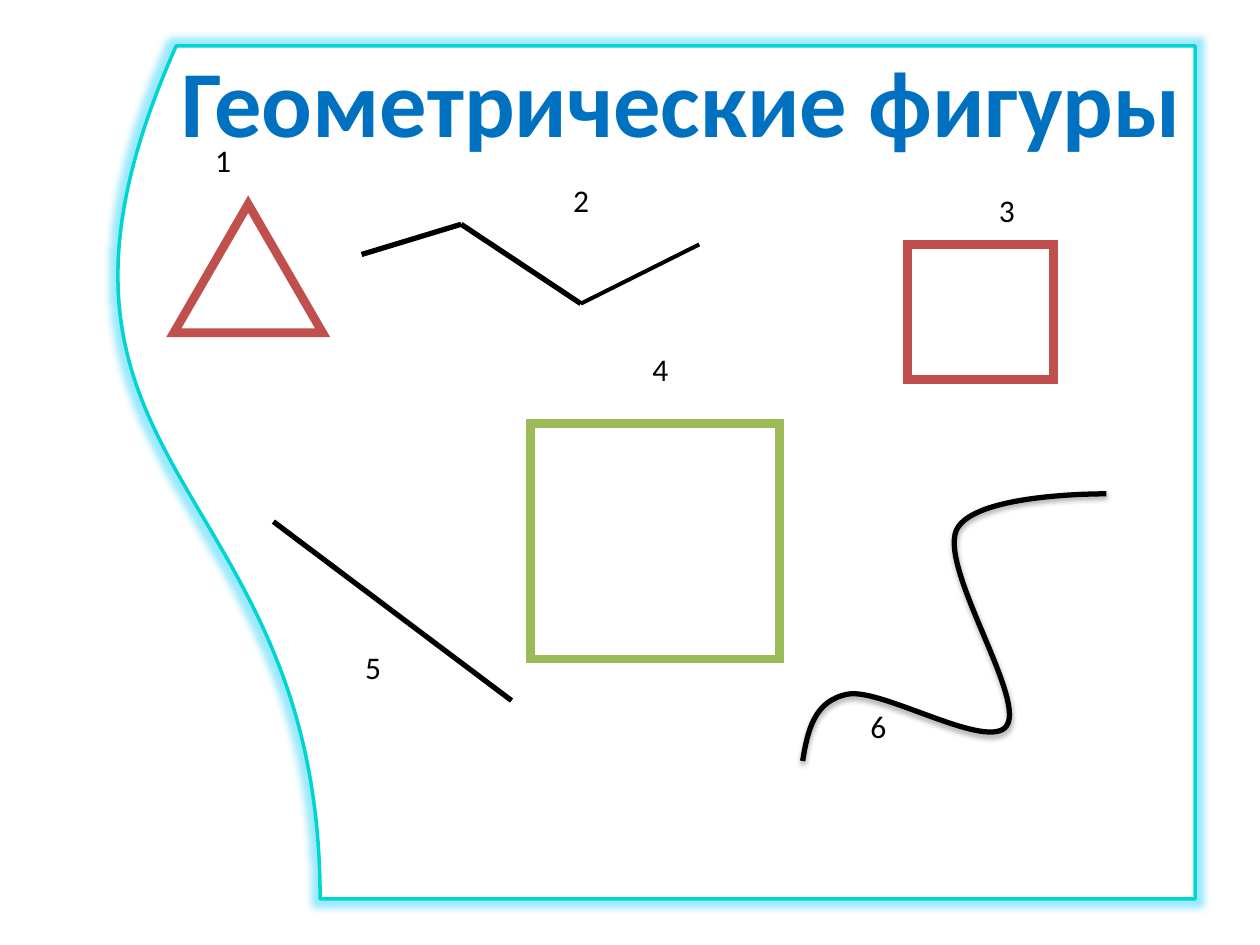
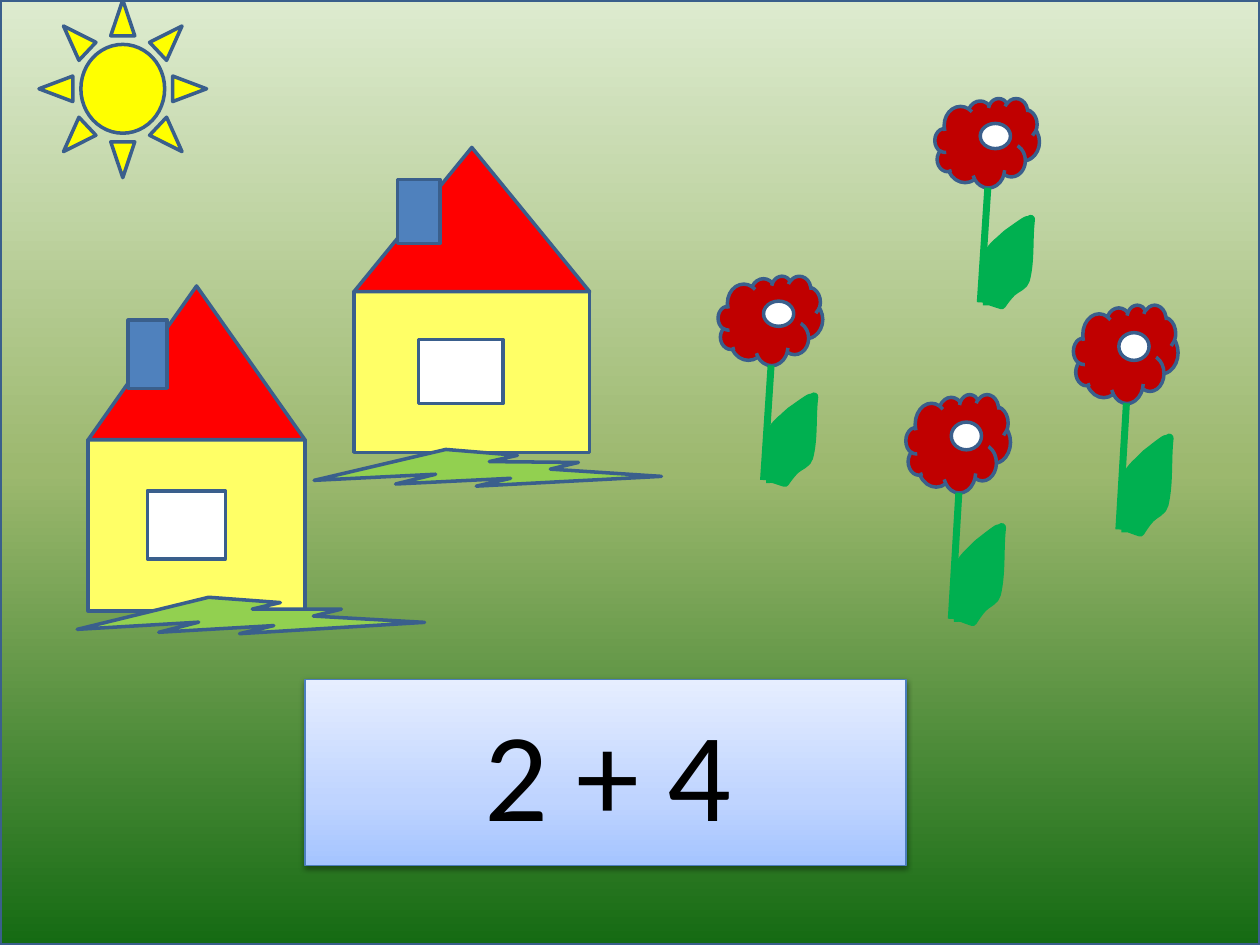
from copy import deepcopy

from pptx import Presentation
from pptx import util as u
from pptx.dml.color import RGBColor
from pptx.enum import shapes, text
from pptx.oxml import parse_xml
from pptx.oxml.ns import nsdecls, qn

KIND = shapes.MSO_SHAPE
STRAIGHT = shapes.MSO_CONNECTOR.STRAIGHT
FONT = "Calibri"
BLACK, WHITE, CYAN = "000000", "FFFFFF", "00D5D0"
RED, GREEN, LEAF, NAVY = "C0504D", "9BBB59", "00B050", "3A5F8C"
SHADOW = ('<a:outerShdw blurRad="40000" dist="{}" dir="5400000" rotWithShape="0">'
          '<a:srgbClr val="000000"><a:alpha val="{}000"/></a:srgbClr></a:outerShdw>')
GLOW = ('<a:glow rad="101600"><a:srgbClr val="00C8F5">'
        '<a:alpha val="40000"/></a:srgbClr></a:glow>')

presentation = Presentation()
presentation.slide_width = u.Inches(10)
presentation.slide_height = u.Inches(7.5)
CELL = presentation.slide_width / 10  # the grid has 10 columns and 7.5 rows


def cells(*lengths):
    return [round(length * CELL) for length in lengths]


def paint(shape, fill, line, width, effect=""):
    """Fill is a hex string, a list of (position, hex) running down, or None."""
    if isinstance(fill, list):
        shape.fill.gradient()
        shape.fill.gradient_angle = 270
        stop_list = shape.element.find(".//" + qn("a:gsLst"))
        while len(stop_list) < len(fill):
            stop_list.append(deepcopy(stop_list[0]))
        for stop, (position, colour) in zip(shape.fill.gradient_stops, fill):
            stop.position = position
            stop.color.rgb = RGBColor.from_string(colour)
    elif fill:
        shape.fill.solid()
        shape.fill.fore_color.rgb = RGBColor.from_string(fill)
    elif hasattr(shape, "fill"):
        shape.fill.background()
    shape.line.color.rgb = RGBColor.from_string(line)
    shape.line.width = u.Pt(width)
    shape.element.spPr.append(
        parse_xml(f'<a:effectLst {nsdecls("a")}>{effect}</a:effectLst>'))


blank = presentation.slide_layouts[6]
figures = presentation.slides.add_slide(blank)
picture = presentation.slides.add_slide(blank)

# Shared frame, kept on the master
frame = figures.shapes.add_shape(KIND.FLOWCHART_DOCUMENT, *cells(1.77, -0.58, 6.77, 8.66))
frame.rotation = 90
paint(frame, WHITE, CYAN, 2, GLOW)
frame.element.nvSpPr.cNvPr.set("id", "20")
presentation.slide_master.shapes.element.append(frame.element)

# Slide 1: closed figures with sharp corners
for kind, box, colour in [
    (KIND.ISOSCELES_TRIANGLE, (1.38, 1.62, 1.18, 1.02), RED),
    (KIND.RECTANGLE, (7.2, 1.94, 1.16, 1.07), RED),
    (KIND.RECTANGLE, (4.21, 3.36, 1.98, 1.87), GREEN),
]:
    figure = figures.shapes.add_shape(kind, *cells(*box))
    paint(figure, WHITE, colour, 5)
    figure.element.spPr.find(qn("a:ln")).append(
        parse_xml(f'<a:miter {nsdecls("a")} lim="800000"/>'))

# Slide 1: segment and broken line
for ends, width in [
    ((2.17, 4.14, 4.06, 5.56), 3),
    ((3.66, 1.78, 4.61, 2.41), 3),
    ((2.87, 2.02, 3.66, 1.78), 3),
    ((4.61, 2.41, 5.55, 1.94), 2.25),
]:
    paint(figures.shapes.add_connector(STRAIGHT, *cells(*ends)), None, BLACK, width)

# Slide 2: meadow and answer panel
meadow = picture.shapes.add_shape(KIND.RECTANGLE, *cells(0, 0, 10, 7.5))
paint(meadow, [(0, "DDEBCF"), (0.5, "9CB86E"), (1, "156B13")], NAVY, 2)
panel = picture.shapes.add_shape(KIND.RECTANGLE, *cells(2.42, 5.39, 4.77, 1.48))
paint(panel, [(0, "E6EEFF"), (0.65, "BFD4FF"), (1, "A4C4FF")], "4B7EBC", 0.75,
      SHADOW.format(20000, 38))

# Slide 2: houses, with parts as shares of the house
house_parts = [
    (KIND.RECTANGLE, (0, 0.473, 1, 0.527), "FFFF66"),
    (KIND.ISOSCELES_TRIANGLE, (0, 0, 1, 0.473), "FF0000"),
    (KIND.RECTANGLE, (0.273, 0.63, 0.36, 0.21), WHITE),
    (KIND.RECTANGLE, (0.185, 0.105, 0.18, 0.21), "4F81BD"),
]
houses = picture.shapes.add_group_shape()
for left, top, width, height in [(0.7, 2.27, 1.72, 2.58), (2.81, 1.17, 1.87, 2.42)]:
    for kind, (x, y, w, h), colour in house_parts:
        part = houses.shapes.add_shape(
            kind, *cells(left + x * width, top + y * height, w * width, h * height))
        paint(part, colour, NAVY, 2)

# Curved outlines: a start point, then Bezier pieces of three points each
curve = [(6.37, 6.04),
         (6.41, 5.8), (6.46, 5.56), (6.73, 5.51),
         (7, 5.46), (7.85, 5.97), (7.99, 5.76),
         (8.14, 5.54), (7.46, 4.52), (7.59, 4.21),
         (7.72, 3.91), (8.78, 3.92), (8.78, 3.92)]
leaf = [(0.38, 1.51),
        (0.39, 1.42), (0.39, 1.33), (0.42, 1.25),
        (0.43, 1.21), (0.46, 1.18), (0.49, 1.15),
        (0.53, 1.12), (0.56, 1.08), (0.61, 1.05),
        (0.86, 0.87), (0.64, 1.06), (0.76, 0.96),
        (0.74, 1.12), (0.76, 1.28), (0.72, 1.44),
        (0.71, 1.49), (0.64, 1.51), (0.61, 1.54),
        (0.58, 1.57), (0.55, 1.61), (0.53, 1.64),
        (0.40, 1.60), (0.46, 1.61), (0.38, 1.61)]
bezier_jobs = [(figures.shapes, curve, None, BLACK, 3, SHADOW.format(23000, 35))]

# Slide 2: flowers
flowers = picture.shapes.add_group_shape()
for left, top, stretch in [(5.7, 2.19, 1), (7.42, 0.78, 1), (7.19, 3.13, 1.1), (8.52, 2.42, 1.1)]:
    for kind, (x, y, w, h), colour in [
        (KIND.CLOUD, (0, 0, 0.83, 0.71), "C00000"),
        (KIND.OVAL, (0.36, 0.2, 0.24, 0.2), WHITE),
    ]:
        part = flowers.shapes.add_shape(
            kind, *cells(left + x, top + y * stretch, w, h * stretch))
        paint(part, colour, NAVY, 2)
    stem = flowers.shapes.add_connector(
        STRAIGHT, *cells(left + 0.42, top + 0.71 * stretch, left + 0.36, top + 1.62 * stretch))
    paint(stem, None, LEAF, 4)
    points = [(left + x, top + y * stretch) for x, y in leaf]
    bezier_jobs.append((flowers.shapes, points, LEAF, LEAF, 5, ""))

# Curved line and leaves: every three straight pieces become one Bezier piece
for target, points, fill, line, width, effect in bezier_jobs:
    start, *others = [cells(*point) for point in points]
    builder = target.build_freeform(*start)
    builder.add_line_segments(others, close=False)
    outline = builder.convert_to_shape()
    pieces = list(outline.element.iter(qn("a:lnTo")))
    for i in range(0, len(pieces), 3):
        bezier = parse_xml(f'<a:cubicBezTo {nsdecls("a")}/>')
        pieces[i].addprevious(bezier)
        for piece in pieces[i:i + 3]:
            bezier.append(piece[0])
            piece.getparent().remove(piece)
    paint(outline, fill, line, width, effect)

# Slide 2: sun and grass
for kind, box, rotation, colour in [
    (KIND.SUN, (0.31, 0, 1.33, 1.41), 0, "FFFF00"),
    (KIND.LIGHTNING_BOLT, (0.62, 4.69, 2.73, 0.47), 350.8, "92D050"),
    (KIND.LIGHTNING_BOLT, (2.5, 3.52, 2.73, 0.47), 351.3, "92D050"),
]:
    shape = picture.shapes.add_shape(kind, *cells(*box))
    shape.rotation = rotation
    paint(shape, colour, NAVY, 2)

# Text on both slides: figure numbers, title, sum
labels = [
    (figures, words, (left, top, 0.33, 0.4), 18, BLACK, None)
    for words, left, top in [("1", 1.61, 1.07), ("2", 4.45, 1.39), ("3", 7.83, 1.47),
                             ("4", 5.08, 2.73), ("5", 2.8, 5.09), ("6", 6.81, 5.56)]
]
labels += [
    (figures, "Геометрические фигуры", (1.3, 0.29, 8.22, 1.01), 54, "0070C0", ("FCFCFD", 1.4)),
    (picture, "2 + 4", (3.59, 5.47, 2.47, 1.31), 72, BLACK, ("054697", 1)),
]
for slide, words, box, size, colour, outline in labels:
    label = slide.shapes.add_textbox(*cells(*box))
    label.text_frame.word_wrap = False
    label.text_frame.auto_size = text.MSO_AUTO_SIZE.SHAPE_TO_FIT_TEXT
    paragraph = label.text_frame.paragraphs[0]
    run = paragraph.add_run()
    run.text = words
    run.font.name = FONT
    run.font.size = u.Pt(size)
    run.font.bold = size == 54
    run.font.color.rgb = RGBColor.from_string(colour)
    if outline:
        paragraph.alignment = text.PP_ALIGN.CENTER
        line_colour, line_width = outline
        label.element.find(".//" + qn("a:rPr")).insert(0, parse_xml(
            f'<a:ln {nsdecls("a")} w="{u.Pt(line_width)}"><a:solidFill>'
            f'<a:srgbClr val="{line_colour}"/></a:solidFill></a:ln>'))

presentation.save("out.pptx")
